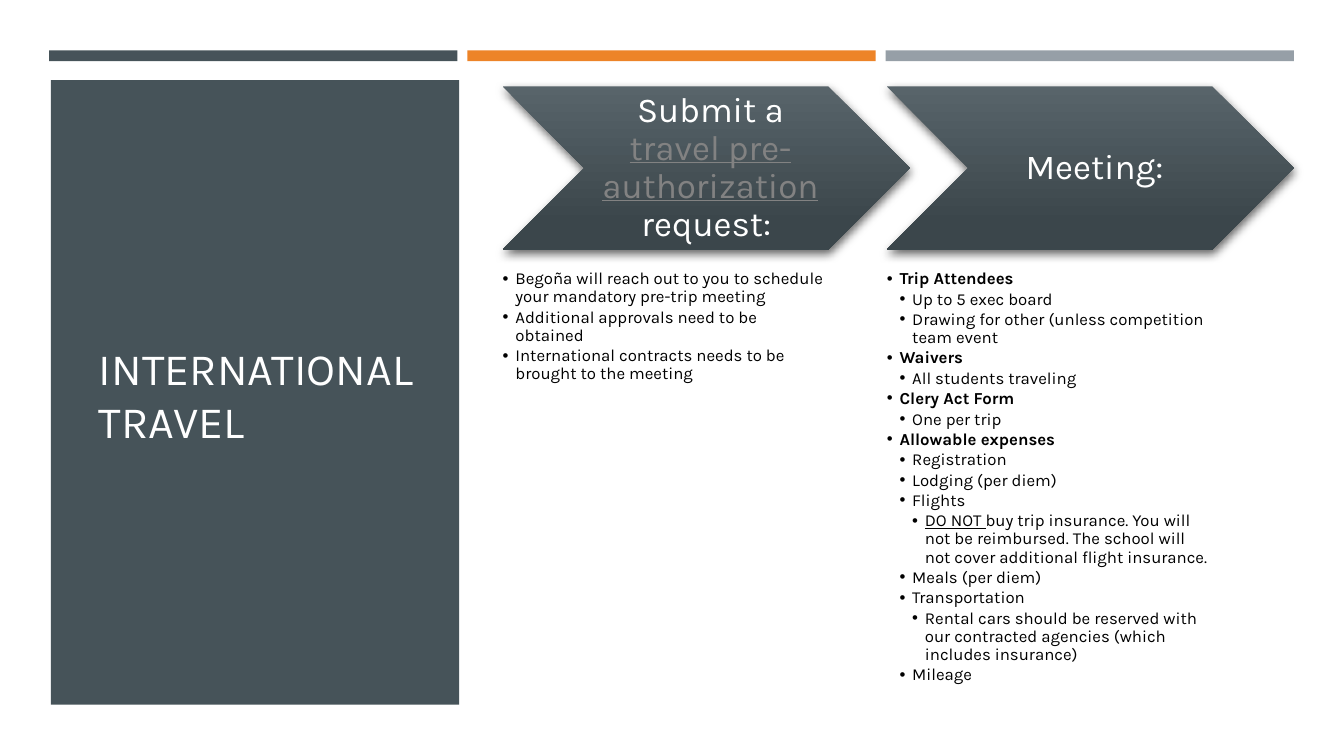
from dataclasses import dataclass
from typing import Any

from lxml import etree
from pptx import Presentation
from pptx import util as u
from pptx.dml.color import RGBColor
from pptx.enum import shapes, text
from pptx.oxml import ns

SLATE = RGBColor(0x46, 0x53, 0x59)
ORANGE = RGBColor(0xED, 0x84, 0x28)
SILVER = RGBColor(0x96, 0x9F, 0xA7)
LIGHT = RGBColor(0x58, 0x64, 0x6A)
DARK = RGBColor(0x3B, 0x46, 0x4B)
LINK = RGBColor(0x82, 0x82, 0x82)
WHITE = RGBColor(0xFF, 0xFF, 0xFF)
BLACK = RGBColor(0, 0, 0)
FACE = "Karla"
STEP = 0.32


@dataclass(frozen=True)
class Span:
    words: str
    color: RGBColor = BLACK
    bold: bool = False
    under: bool = False


@dataclass(frozen=True)
class Item:
    level: int
    spans: tuple[Span, ...]


@dataclass(frozen=True)
class Stage:
    head: tuple[Span, ...]
    items: tuple[Item, ...]


@dataclass(frozen=True)
class Box:
    left: float
    top: float
    width: float
    height: float

    def place(self) -> tuple[u.Length, ...]:
        return tuple(u.Cm(n) for n in (self.left, self.top, self.width, self.height))


def head(words: str) -> Item:
    return Item(1, (Span(words, bold=True),))


def item(level: int, words: str) -> Item:
    return Item(level, (Span(words),))


STAGES = (
    Stage(
        (Span("Submit a ", WHITE),
         Span("travel pre-authorization ", LINK, under=True),
         Span("request: ", WHITE)),
        (item(1, "Begoña will reach out to you to schedule your mandatory pre-trip meeting"),
         item(1, "Additional approvals need to be obtained"),
         item(1, "International contracts needs to be brought to the meeting")),
    ),
    Stage(
        (Span("Meeting:", WHITE),),
        (head("Trip Attendees"),
         item(2, "Up to 5 exec board"),
         item(2, "Drawing for other (unless competition team event"),
         head("Waivers"),
         item(2, "All students traveling"),
         head("Clery Act Form"),
         item(2, "One per trip"),
         head("Allowable expenses"),
         item(2, "Registration"),
         item(2, "Lodging (per diem)"),
         item(2, "Flights"),
         Item(3, (Span("DO NOT ", under=True),
                  Span("buy trip insurance. You will not be reimbursed. "
                       "The school will not cover additional flight insurance."))),
         item(2, "Meals (per diem)"),
         item(2, "Transportation"),
         item(3, "Rental cars should be reserved with our contracted agencies "
                 "(which includes insurance)"),
         item(2, "Mileage")),
    ),
)


def put(thing: Any, vals: dict[str, Any]) -> None:
    for name, val in vals.items():
        setattr(thing, name, val)


def node(base: Any, tag: str, **vals: str) -> Any:
    return etree.SubElement(base, ns.qn(tag), vals)


def shape(slide: Any, kind: Any, box: Box) -> Any:
    form = slide.shapes.add_shape(kind, *box.place())
    form.shadow.inherit = False
    form.line.fill.background()
    return form


def block(slide: Any, box: Box, color: RGBColor) -> None:
    form = shape(slide, shapes.MSO_SHAPE.RECTANGLE, box)
    form.fill.solid()
    form.fill.fore_color.rgb = color


def arrow(slide: Any, box: Box) -> None:
    form = shape(slide, shapes.MSO_SHAPE.CHEVRON, box)
    form.fill.gradient()
    form.fill.gradient_angle = 270
    for stop, (place, color) in zip(form.fill.gradient_stops, ((0, LIGHT), (0.84, DARK))):
        stop.position = place
        stop.color.rgb = color
    effects = form.element.spPr.find(ns.qn("a:effectLst"))
    shade = node(effects, "a:outerShdw", blurRad=str(u.Pt(7)), dist=str(u.Pt(3)),
                 dir=str(84 * 60000), rotWithShape="0")
    tint = node(shade, "a:srgbClr", val=str(BLACK))
    node(tint, "a:alpha", val="60000")


def frame(slide: Any, box: Box, vals: dict[str, Any]) -> Any:
    body = slide.shapes.add_textbox(*box.place()).text_frame
    put(body, {"word_wrap": True, **vals})
    return body


def write(para: Any, spans: tuple[Span, ...], size: int, vals: dict[str, Any]) -> None:
    put(para, {"line_spacing": 0.9, **vals})
    for span in spans:
        run = para.add_run()
        run.text = span.words
        put(run.font, {"name": FACE, "size": u.Pt(size), "bold": span.bold,
                       "underline": span.under})
        run.font.color.rgb = span.color


def bullets(body: Any, items: tuple[Item, ...]) -> None:
    for spot, entry in enumerate(items):
        para = body.add_paragraph() if spot else body.paragraphs[0]
        write(para, entry.spans, 12, {"level": entry.level, "space_after": u.Pt(1.6)})
        props = para._p.get_or_add_pPr()
        props.set("marL", str(u.Cm(STEP * entry.level)))
        props.set("indent", str(-u.Cm(STEP)))
        node(props, "a:buFont", typeface="Arial")
        node(props, "a:buChar", char="•")


def title(slide: Any) -> None:
    name = slide.shapes.title
    put(name, dict(zip(("left", "top", "width", "height"),
                       Box(2.24, 3.35, 8.59, 13.16).place())))
    body = name.text_frame
    body.text = "INTERNATIONAL TRAVEL"
    put(body, {"word_wrap": True, "auto_size": text.MSO_AUTO_SIZE.NONE,
               "vertical_anchor": text.MSO_ANCHOR.MIDDLE})
    para = body.paragraphs[0]
    put(para, {"alignment": text.PP_ALIGN.LEFT, "line_spacing": 1.0})
    put(para.runs[0].font, {"name": FACE, "size": u.Pt(32)})
    para.runs[0].font.color.rgb = WHITE


def main() -> None:
    deck = Presentation()
    put(deck, {"slide_width": u.Cm(33.87), "slide_height": u.Cm(19.05)})
    slide = deck.slides.add_slide(deck.slide_layouts[5])
    block(slide, Box(1.28, 2.02, 10.29, 15.74), SLATE)
    slide.shapes._spTree.append(slide.shapes.title.element)
    title(slide)
    for spot, color in enumerate((SLATE, ORANGE, SILVER)):
        block(slide, Box(1.24 + 10.54 * spot, 1.27, 10.29, 0.27), color)
    label = {"vertical_anchor": text.MSO_ANCHOR.MIDDLE, "margin_left": u.Cm(0.28),
             "margin_right": u.Cm(0.1), "margin_top": u.Cm(0.1), "margin_bottom": u.Cm(0.1)}
    flush = {f"margin_{side}": 0 for side in ("left", "right", "top", "bottom")}
    for spot, stage in enumerate(STAGES):
        left = 12.67 + 9.68 * spot
        arrow(slide, Box(left, 2.18, 10.26, 4.11))
        body = frame(slide, Box(left + 2.06, 2.18, 6.17, 4.11), label)
        write(body.paragraphs[0], stage.head, 25, {"alignment": text.PP_ALIGN.CENTER})
        bullets(frame(slide, Box(left, 6.81, 8.2, 10.57), flush), stage.items)
    deck.save("out.pptx")


if __name__ == "__main__":
    main()
